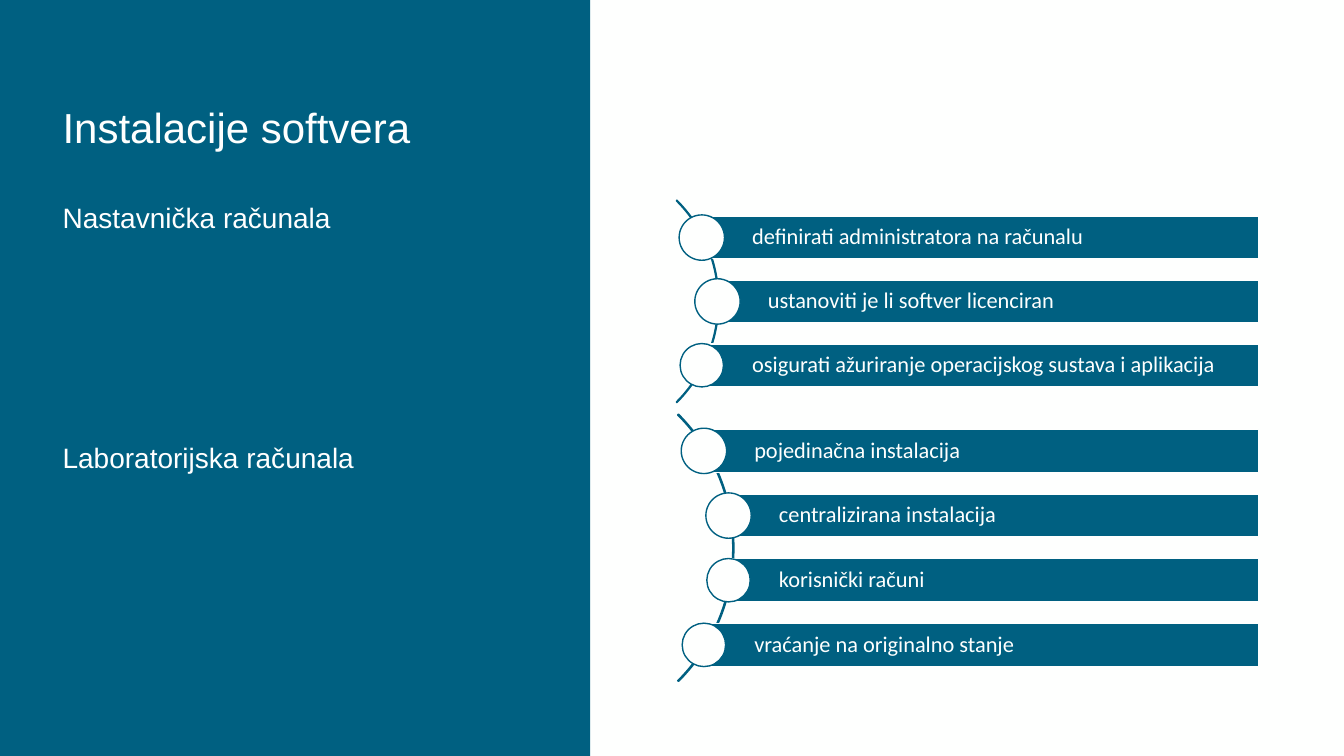
from dataclasses import dataclass

from lxml.etree import SubElement
from pptx import Presentation
from pptx.dml.color import RGBColor
from pptx.enum.shapes import MSO_SHAPE
from pptx.enum.text import MSO_ANCHOR, MSO_AUTO_SIZE, PP_ALIGN
from pptx.oxml.ns import qn
from pptx.util import Pt


@dataclass(frozen=True)
class Theme:
    """Colours, fonts and type sizes of the slide."""
    teal: RGBColor = RGBColor(0x00, 0x60, 0x81)
    paper: RGBColor = RGBColor(0xFE, 0xFF, 0xFE)
    white: RGBColor = RGBColor(0xFF, 0xFF, 0xFF)
    head_font: str = "Arial"
    list_font: str = "Calibri"
    title: int = 30
    body: int = 20
    item: int = 16


THEME = Theme()


def place(sp, left, top, width, height):
    """Move a placeholder to a box given in points."""
    sp.left, sp.top, sp.width, sp.height = map(Pt, (left, top, width, height))


def add_run(p, text, font, size, color):
    """Append one formatted run to a paragraph."""
    r = p.add_run()
    r.text = text
    r.font.name, r.font.size = font, Pt(size)
    r.font.color.rgb = color


def add_shape(shapes, kind, box, fill, line=None):
    """Add a flat shape with a fill and an optional thin outline."""
    sp = shapes.add_shape(kind, *map(Pt, box))
    sp.shadow.inherit = False
    sp.fill.solid()
    sp.fill.fore_color.rgb = fill
    if line is None:
        sp.line.fill.background()
    else:
        sp.line.color.rgb = line
        sp.line.width = Pt(1)
    return sp


def add_side_panel(s, box, title, headings):
    """Build the coloured panel with the title and spaced headings."""
    left, top, width, height = box
    panel = add_shape(s.shapes, MSO_SHAPE.RECTANGLE, box, THEME.teal)
    s.shapes._spTree.insert(2, panel._element)

    sp = s.shapes.title
    place(sp, left + 37.5, top + 37.5, width - 77, 75)
    tf = sp.text_frame
    tf.auto_size = MSO_AUTO_SIZE.NONE
    tf.vertical_anchor = MSO_ANCHOR.BOTTOM
    p = tf.paragraphs[0]
    p.alignment = PP_ALIGN.LEFT
    p.line_spacing = 0.9
    add_run(p, title, THEME.head_font, THEME.title, THEME.paper)

    sp = s.placeholders[1]
    place(sp, left + 37.5, top + 139.7, width - 77, 363.6)
    tf = sp.text_frame
    tf.auto_size = MSO_AUTO_SIZE.NONE
    for i, (text, gap) in enumerate(headings):
        p = tf.paragraphs[0] if i == 0 else tf.add_paragraph()
        pPr = p._p.get_or_add_pPr()
        pPr.set("marL", "0")
        pPr.set("indent", "0")
        SubElement(pPr, qn("a:buNone"))
        p.space_before = Pt(gap)
        add_run(p, text, THEME.head_font, THEME.body, THEME.white)


def add_curved_list(s, box, step, bar_height, arc, rows):
    """Build bars with round markers along an arc centred on the list."""
    left, top, width = box
    arc_left, size = arc
    shapes = s.shapes.add_group_shape().shapes
    mid = top + ((len(rows) - 1) * step + bar_height) / 2
    curve = add_shape(shapes, MSO_SHAPE.BLOCK_ARC,
                      (arc_left, mid - size / 2, size, size),
                      THEME.paper, THEME.teal)
    for i, value in enumerate((189, 27, 0.003)):
        curve.adjustments[i] = value

    for i, (text, shift, dot) in enumerate(rows):
        x, y = left + shift, top + i * step
        bar = add_shape(shapes, MSO_SHAPE.RECTANGLE,
                        (x, y, width - shift, bar_height),
                        THEME.teal, THEME.paper)
        tf = bar.text_frame
        tf.word_wrap = True
        tf.vertical_anchor = MSO_ANCHOR.MIDDLE
        tf.margin_left = Pt(36)
        tf.margin_top = tf.margin_right = tf.margin_bottom = Pt(2.9)
        p = tf.paragraphs[0]
        p.alignment = PP_ALIGN.LEFT
        p.line_spacing = 0.9
        add_run(p, text, THEME.list_font, THEME.item, THEME.paper)
        add_shape(shapes, MSO_SHAPE.OVAL,
                  (x - dot / 2, y + (bar_height - dot) / 2, dot, dot),
                  THEME.paper, THEME.teal)


def main():
    """Create the slide and save it."""
    prs = Presentation()
    prs.slide_width, prs.slide_height = Pt(960), Pt(540)
    s = prs.slides.add_slide(prs.slide_layouts[1])
    s.background.fill.solid()
    s.background.fill.fore_color.rgb = THEME.paper

    add_side_panel(s, (0, 0, 421.5, 540), "Instalacije softvera",
                   [("Nastavnička računala", 0),
                    ("Laboratorijska računala", 147)])
    add_curved_list(s, (501.3, 154.6, 398), 45.6, 30.2, (309, 204.5), [
        ("definirati administratora na računalu", 0, 32.4),
        ("ustanoviti je li softver licenciran", 11.2, 32.4),
        ("osigurati ažuriranje operacijskog sustava i aplikacija", 0, 31)])
    add_curved_list(s, (502.8, 306.7, 396), 46.2, 30.7, (254.2, 270), [
        ("pojedinačna instalacija", 0, 32.4),
        ("centralizirana instalacija", 17.6, 32.4),
        ("korisnički računi", 17.6, 31),
        ("vraćanje na originalno stanje", 0, 31)])
    prs.save("out.pptx")


if __name__ == "__main__":
    main()
